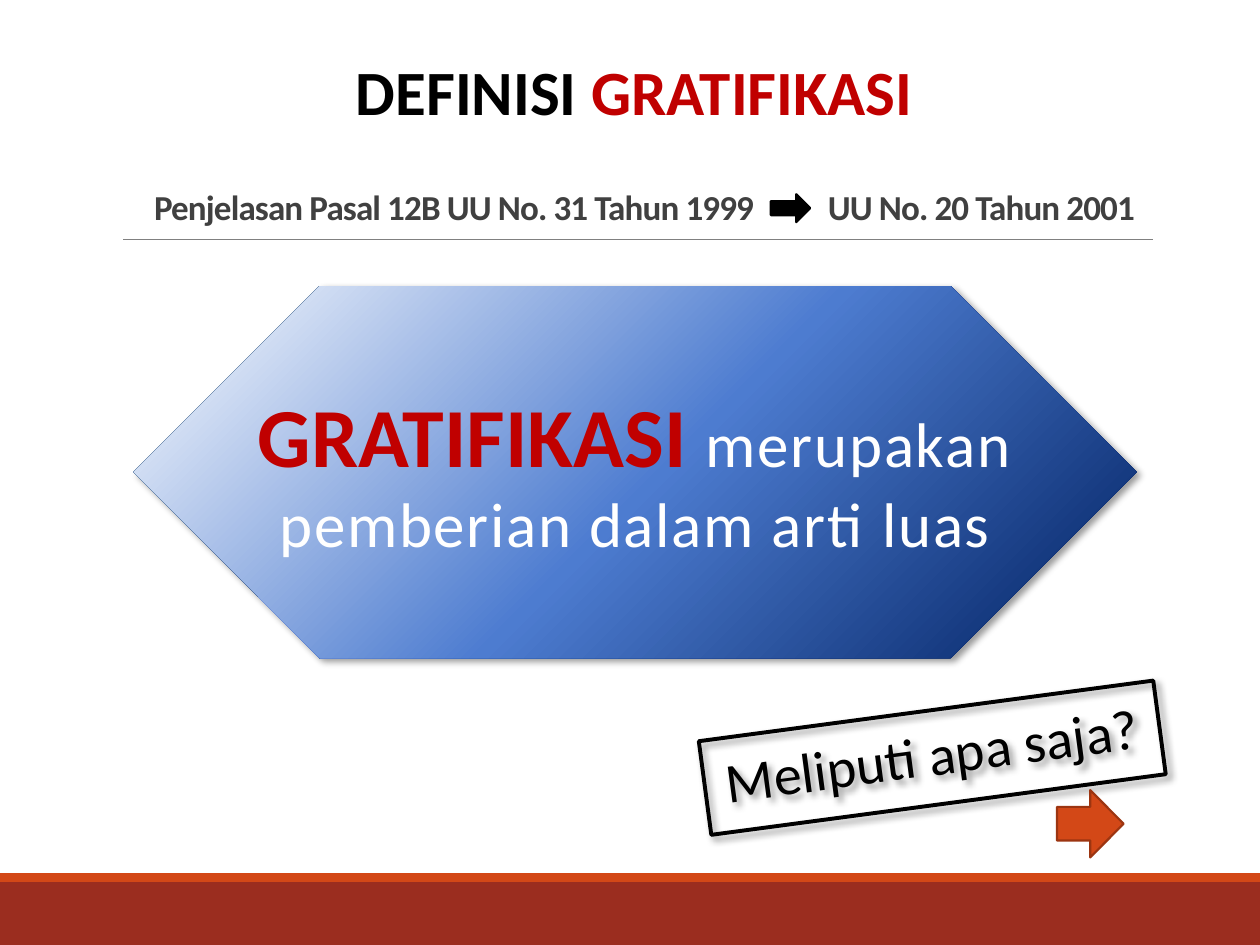
from lxml import etree
from pptx import Presentation
from pptx.dml.color import RGBColor
from pptx.enum import shapes, text
from pptx.oxml import ns
from pptx.util import Pt

# Content: runs are (words, style name)
HEADING = [("DEFINISI ", "heading"), ("GRATIFIKASI", "heading_red")]
SOURCE_LAW = [("Penjelasan Pasal 12B UU No. 31 Tahun 1999\tUU No. 20 Tahun 2001", "law")]
DEFINITION = [("GRATIFIKASI ", "term"), ("merupakan pemberian dalam arti luas", "meaning")]
QUESTION = [("Meliputi apa saja?", "question")]

THEME = {
    "font": "Calibri",
    "colors": {"black": "000000", "white": "FFFFFF", "gray": "404040", "red": "C00000",
               "rule": "808080", "brick": "9B2D1F", "orange": "D34817", "rust": "9C3511"},
    "gradient": [(0, "002060"), (48, "4D7CD0"), (100, "FFFFFF")],
    # style: size, color, bold, letter spacing
    "styles": {"heading": (36, "black", True, 0), "heading_red": (36, "red", True, 0),
               "law": (20, "gray", True, -0.5), "term": (48, "red", True, 0),
               "meaning": (36, "white", False, 1), "question": (32, "black", False, 0)},
}

WIDTH, HEIGHT = 720, 540
FOOTER_TOP, STRIPE = 504, 5
# Places: left, top, width, height
FOOTER = [("brick", (0, FOOTER_TOP, WIDTH, HEIGHT - FOOTER_TOP)),
          ("orange", (0, FOOTER_TOP - STRIPE, WIDTH, STRIPE))]
ARROWS = [("black", "black", (440.5, 111, 22.5, 16)),
          ("orange", "rust", (604, 451.5, 38, 38.5))]
HEADING_BOX = (150.5, 26.5, 424, 51)
LAW_BOX = (60, 106, 618, 28)
LAW_TEXT_LEFT, SECOND_LAW_LEFT = 88, 473
HEXAGON_BOX = (76.5, 163.5, 573, 212.5)
QUESTION_BOX = (401.75, 406, 262, 54)
RULE_LEFT, RULE_RIGHT, RULE_Y = 70.5, 659, 136.8


def color(name):
    return RGBColor.from_string(THEME["colors"][name])


def place(shape, box):
    for side, value in zip(("left", "top", "width", "height"), box):
        setattr(shape, side, Pt(value))


def write(shape, runs, frame_format, paragraph_format):
    frame = shape.text_frame
    for name, value in {"word_wrap": True, **frame_format}.items():
        setattr(frame, name, value)
    paragraph = frame.paragraphs[0]
    for name, value in paragraph_format.items():
        setattr(paragraph, name, value)
    for words, style in runs:
        size, tone, bold, spacing = THEME["styles"][style]
        run = paragraph.add_run()
        run.text = words
        values = {"name": THEME["font"], "size": Pt(size), "bold": bold}
        for name, value in values.items():
            setattr(run.font, name, value)
        run.font.color.rgb = color(tone)
        run._r.get_or_add_rPr().set("spc", str(int(spacing * 100)))
    return paragraph


def add_child(parent, tag, **attributes):
    return etree.SubElement(parent, ns.qn(tag), attributes)


def add_shape(kind, box, fill=None, line=None):
    shape = slide.shapes.add_shape(kind, *map(Pt, box))
    shape.shadow.inherit = False
    if fill:
        shape.fill.solid()
        shape.fill.fore_color.rgb = color(fill)
    if line:
        shape.line.color.rgb = color(line)
        shape.line.width = Pt(1.25)
    else:
        shape.line.fill.background()
    return shape


def cast_shadow(shape):
    shape.shadow.inherit = False
    effects = shape._element.spPr.find(ns.qn("a:effectLst"))
    shadow = add_child(effects, "a:outerShdw", blurRad=str(Pt(4)), dist=str(Pt(3)),
                       dir="2700000", algn="tl", rotWithShape="0")
    tone = add_child(shadow, "a:srgbClr", val=THEME["colors"]["black"])
    add_child(tone, "a:alpha", val="40000")


def fill_gradient(shape, stops, angle):
    shape.fill.background()
    properties = shape._element.spPr
    gradient = etree.Element(ns.qn("a:gradFill"), rotWithShape="1")
    stop_list = add_child(gradient, "a:gsLst")
    for position, tone in stops:
        stop = add_child(stop_list, "a:gs", pos=str(position * 1000))
        add_child(stop, "a:srgbClr", val=tone)
    add_child(gradient, "a:lin", ang=str(angle * 60000), scaled="0")
    properties.replace(properties.find(ns.qn("a:noFill")), gradient)


presentation = Presentation()
presentation.slide_width, presentation.slide_height = Pt(WIDTH), Pt(HEIGHT)
slide = presentation.slides.add_slide(presentation.slide_layouts[1])
CENTER, LEFT = text.PP_ALIGN.CENTER, text.PP_ALIGN.LEFT
MIDDLE, BOTTOM = text.MSO_ANCHOR.MIDDLE, text.MSO_ANCHOR.BOTTOM

# Footer bands and rule
for fill, box in FOOTER:
    add_shape(shapes.MSO_SHAPE.RECTANGLE, box, fill)
rule = slide.shapes.add_connector(shapes.MSO_CONNECTOR.STRAIGHT, Pt(RULE_LEFT), Pt(RULE_Y),
                                  Pt(RULE_RIGHT), Pt(RULE_Y))
rule.line.color.rgb = color("rule")
rule.line.width = Pt(0.5)
add_child(rule._element.spPr, "a:effectLst")

# Definition in the hexagon
hexagon = add_shape(shapes.MSO_SHAPE.SNIP_2_DIAG_RECTANGLE, HEXAGON_BOX)
hexagon.adjustments[0] = hexagon.adjustments[1] = 0.5
fill_gradient(hexagon, THEME["gradient"], 225)
cast_shadow(hexagon)
write(hexagon, DEFINITION, {"vertical_anchor": MIDDLE}, {"alignment": CENTER})

# Title: the two laws, with a tab stop that leaves room for the arrow
title = slide.shapes.title
place(title, LAW_BOX)
law = write(title, SOURCE_LAW,
            {"vertical_anchor": BOTTOM, "margin_left": Pt(LAW_TEXT_LEFT - LAW_BOX[0]),
             "margin_right": 0, "auto_size": text.MSO_AUTO_SIZE.NONE},
            {"alignment": LEFT, "line_spacing": 0.85})
tabs = add_child(law._p.get_or_add_pPr(), "a:tabLst")
add_child(tabs, "a:tab", pos=str(Pt(SECOND_LAW_LEFT - LAW_TEXT_LEFT)), algn="l")

# Body: the tilted question
question = slide.placeholders[1]
place(question, QUESTION_BOX)
question.rotation = 352.4
question.line.color.rgb = color("black")
question.line.width = Pt(2.25)
cast_shadow(question)
line = write(question, QUESTION,
             {"vertical_anchor": MIDDLE, "margin_left": 0, "margin_right": 0,
              "auto_size": text.MSO_AUTO_SIZE.NONE},
             {"alignment": CENTER, "line_spacing": 0.9, "space_before": 0, "space_after": Pt(2)})
properties = line._p.get_or_add_pPr()
properties.set("marL", "0")
properties.set("indent", "0")
add_child(properties, "a:buNone")

# Heading
heading = slide.shapes.add_textbox(*map(Pt, HEADING_BOX))
write(heading, HEADING, {}, {"alignment": CENTER})

# Arrows
for fill, outline, box in ARROWS:
    add_shape(shapes.MSO_SHAPE.RIGHT_ARROW, box, fill, outline)

presentation.save("out.pptx")
